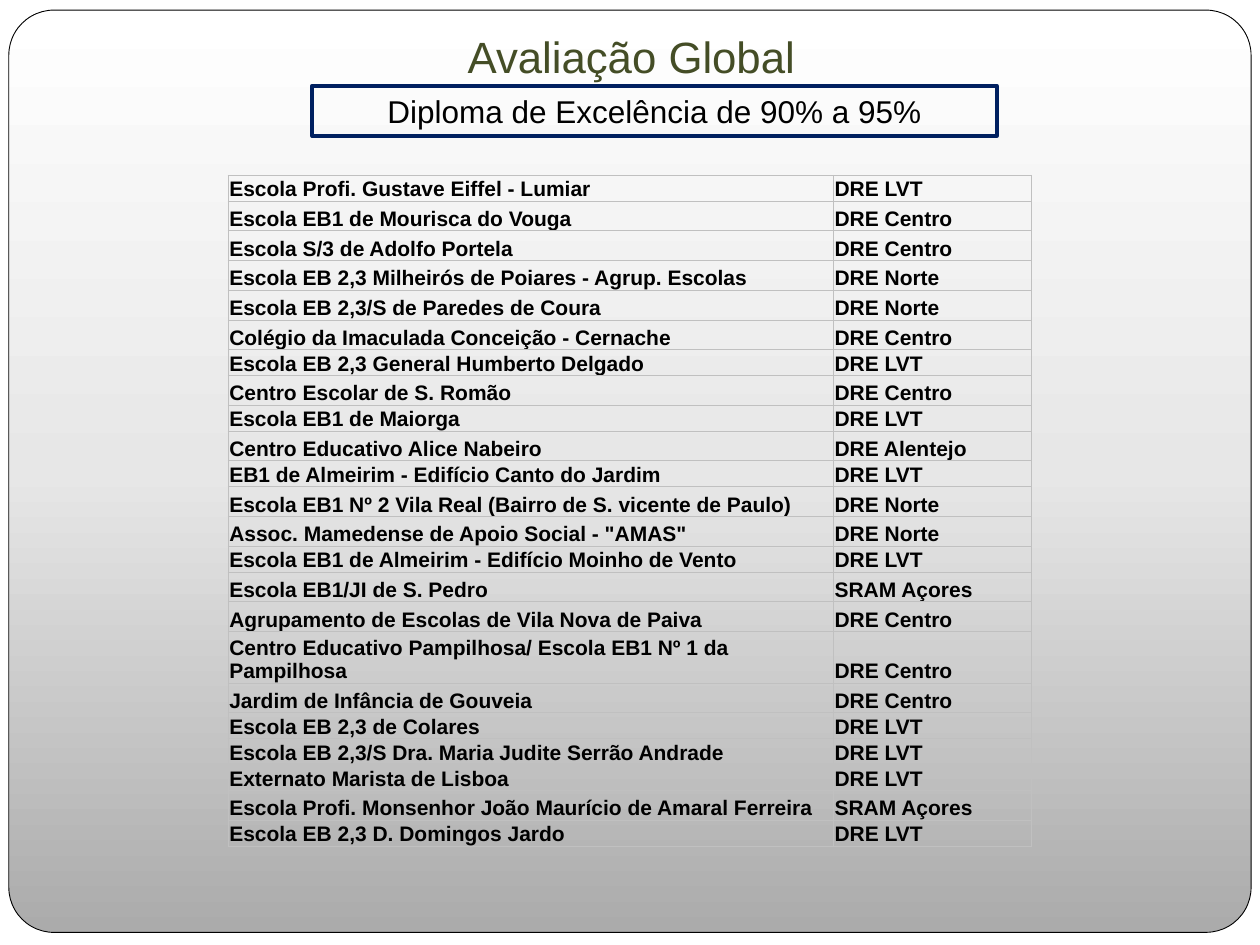
from copy import deepcopy

from lxml import etree
from pptx import Presentation
from pptx.dml.color import RGBColor
from pptx.enum.shapes import MSO_SHAPE
from pptx.enum.text import MSO_ANCHOR, PP_ALIGN
from pptx.oxml.ns import qn
from pptx.util import Inches, Pt

CENTER, LEFT = PP_ALIGN.CENTER, PP_ALIGN.LEFT
BOTTOM, MIDDLE = MSO_ANCHOR.BOTTOM, MSO_ANCHOR.MIDDLE
RECTANGLE, ROUNDED = MSO_SHAPE.RECTANGLE, MSO_SHAPE.ROUNDED_RECTANGLE
TITLE_ONLY = 5
FONT = "Arial"
COLORS = {
    "white": "FFFFFF", "black": "000000", "title": "444D26", "frame": "002060",
    "border": "C0C0C0", "shade": "ABABAB", "mid": "E7E7E7",
}
SHORT_ROW, TALL_ROW, DOUBLE_ROW = Pt(14.8), Pt(17), Pt(29.5)
LONG_NAME = 56
SCHOOLS = [
    ("Escola Profi. Gustave Eiffel - Lumiar", "DRE LVT"),
    ("Escola EB1 de Mourisca do Vouga", "DRE Centro"),
    ("Escola S/3 de Adolfo Portela", "DRE Centro"),
    ("Escola EB 2,3 Milheirós de Poiares - Agrup. Escolas", "DRE Norte"),
    ("Escola EB 2,3/S de Paredes de Coura", "DRE Norte"),
    ("Colégio da Imaculada Conceição - Cernache", "DRE Centro"),
    ("Escola EB 2,3 General Humberto Delgado", "DRE LVT"),
    ("Centro Escolar de S. Romão", "DRE Centro"),
    ("Escola EB1 de Maiorga", "DRE LVT"),
    ("Centro Educativo Alice Nabeiro", "DRE Alentejo"),
    ("EB1 de Almeirim - Edifício Canto do Jardim", "DRE LVT"),
    ("Escola EB1 Nº 2 Vila Real (Bairro de S. vicente de Paulo)", "DRE Norte"),
    ("Assoc. Mamedense de Apoio Social - \"AMAS\"", "DRE Norte"),
    ("Escola EB1 de Almeirim - Edifício Moinho de Vento", "DRE LVT"),
    ("Escola EB1/JI de S. Pedro", "SRAM Açores"),
    ("Agrupamento de Escolas de Vila Nova de Paiva", "DRE Centro"),
    ("Centro Educativo Pampilhosa/ Escola EB1 Nº 1 da Pampilhosa", "DRE Centro"),
    ("Jardim de Infância de Gouveia", "DRE Centro"),
    ("Escola EB 2,3 de Colares", "DRE LVT"),
    ("Escola EB 2,3/S Dra. Maria Judite Serrão Andrade", "DRE LVT"),
    ("Externato Marista de Lisboa", "DRE LVT"),
    ("Escola Profi. Monsenhor João Maurício de Amaral Ferreira", "SRAM Açores"),
    ("Escola EB 2,3 D. Domingos Jardo", "DRE LVT"),
]


def color(name):
    """Return a palette colour."""
    return RGBColor.from_string(COLORS[name])


def inches(*lengths):
    """Convert a box given in inches."""
    return [Inches(length) for length in lengths]


def write(frame, text, size, ink="black", align=CENTER, bold=False):
    """Fill a text frame with one formatted paragraph."""
    frame.text = text
    frame.word_wrap = True
    para = frame.paragraphs[0]
    para.alignment = align
    para.font.name, para.font.size, para.font.bold = FONT, Pt(size), bold
    para.font.color.rgb = color(ink)


def add_panel(page, box):
    """Place the shaded rounded panel behind everything else."""
    panel = page.shapes.add_shape(ROUNDED, *box)
    panel.shadow.inherit = False
    panel.adjustments[0] = 0.049
    panel.line.color.rgb = color("black")
    panel.line.width = Pt(0.5)
    panel.fill.gradient()
    panel.fill.gradient_angle = 90
    first_stop = panel.fill.gradient_stops[0]
    stop_list = panel._element.spPr.find(qn("a:gradFill")).find(qn("a:gsLst"))
    stop_list.insert(1, deepcopy(stop_list[0]))
    shades = zip(panel.fill.gradient_stops, ("shade", "mid", "white"), (0, 0.5, 1))
    for stop, shade, position in shades:
        stop.color.rgb = color(shade)
        stop.position = position
    page.shapes._spTree.insert(2, panel._element)


def add_title(page, box, text):
    """Move and fill the title placeholder."""
    title = page.shapes.title
    title.left, title.top, title.width, title.height = box
    write(title.text_frame, text, 25, "title")
    title.text_frame.vertical_anchor = BOTTOM
    title.text_frame.margin_bottom = Inches(0.1)


def add_caption(page, box, text):
    """Draw the framed diploma caption."""
    caption = page.shapes.add_shape(RECTANGLE, *box)
    caption.shadow.inherit = False
    caption.fill.background()
    caption.line.color.rgb = color("frame")
    caption.line.width = Pt(2.25)
    write(caption.text_frame, text, 18)
    caption.text_frame.vertical_anchor = MIDDLE


def outline(cell):
    """Give a cell thin borders on all four sides."""
    properties = cell._tc.get_or_add_tcPr()
    for index, side in enumerate(("lnL", "lnR", "lnT", "lnB")):
        line = etree.Element(qn(f"a:{side}"), w=str(Pt(0.5)))
        fill = etree.SubElement(line, qn("a:solidFill"))
        etree.SubElement(fill, qn("a:srgbClr"), val=COLORS["border"])
        properties.insert(index, line)


def row_height(name, region):
    """Choose a row height from the region and the length of the name."""
    if len(name) > LONG_NAME + 1:
        return DOUBLE_ROW
    return SHORT_ROW if region == "DRE LVT" else TALL_ROW


def add_schools(page, box, schools):
    """Build the table of schools and regions."""
    table = page.shapes.add_table(len(schools), 2, *box).table
    table.first_row = table.horz_banding = False
    for column, share in zip(table.columns, (0.753, 0.247)):
        column.width = int(box[2] * share)
    for row, school in zip(table.rows, schools):
        row.height = row_height(*school)
        for cell, text in zip(row.cells, school):
            cell.margin_left = cell.margin_right = cell.margin_top = Inches(0.01)
            cell.margin_bottom = 0
            cell.vertical_anchor = BOTTOM
            cell.fill.background()
            outline(cell)
            write(cell.text_frame, text, 12, align=LEFT, bold=True)


def main():
    """Build and save the deck."""
    deck = Presentation()
    deck.slide_width, deck.slide_height = inches(10, 7.5)
    page = deck.slides.add_slide(deck.slide_layouts[TITLE_ONLY])
    page.background.fill.solid()
    page.background.fill.fore_color.rgb = color("white")
    add_panel(page, inches(0.07, 0.08, 9.86, 7.32))
    add_title(page, inches(0.51, 0.21, 9, 0.54), "Avaliação Global")
    add_caption(page, inches(2.48, 0.68, 5.43, 0.4), "Diploma de Excelência de 90% a 95%")
    add_schools(page, inches(1.81, 1.39, 6.38, 5.31), SCHOOLS)
    deck.save("out.pptx")


if __name__ == "__main__":
    main()
